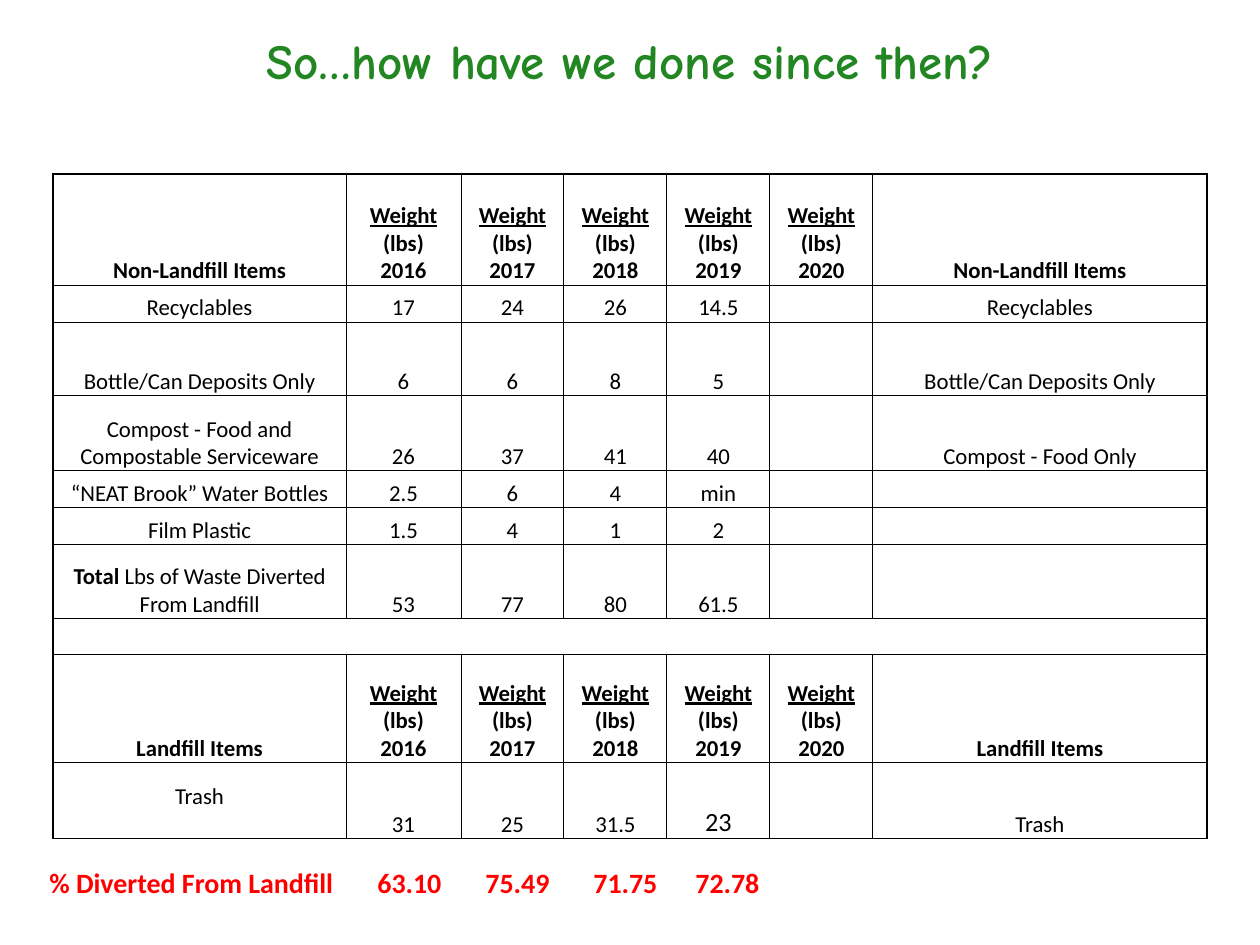
from lxml import etree
from pptx import Presentation
from pptx.dml.color import RGBColor
from pptx.enum.text import MSO_ANCHOR, PP_ALIGN
from pptx.oxml.ns import qn
from pptx.util import Pt

PX = 7257.6  # EMU per pixel at 126 px to the inch
CENTER = PP_ALIGN.CENTER
LEFT = PP_ALIGN.LEFT
BOTTOM = MSO_ANCHOR.BOTTOM


def write(para, text, size=13, font="Calibri", color="000000", bold=False,
          underline=False, align=CENTER):
    """Add text to a paragraph, with a line break at each newline."""
    para.alignment = align
    for number, line in enumerate(text.split("\n")):
        if number:
            para.add_line_break()
            line_break = para._p.findall(qn("a:br"))[-1]
            etree.SubElement(line_break, qn("a:rPr"), sz=str(size * 100))
        if line:
            span = para.add_run()
            span.text = line
            span.font.size = Pt(size)
            span.font.name = font
            span.font.bold = bold
            span.font.underline = underline
            span.font.color.rgb = RGBColor.from_string(color)


def set_border(cell, side, points):
    """Draw one side (L, R, T or B) of a cell; zero points means no line."""
    line = etree.SubElement(cell._tc.get_or_add_tcPr(), qn("a:ln" + side),
                            w=str(Pt(points)))
    if points:
        fill = etree.SubElement(line, qn("a:solidFill"))
        etree.SubElement(fill, qn("a:srgbClr"), val="000000")
    else:
        etree.SubElement(line, qn("a:noFill"))


deck = Presentation()
deck.slide_width = round(1260 * PX)
deck.slide_height = round(945 * PX)
page = deck.slides.add_slide(deck.slide_layouts[6])

# Title
title = page.shapes.add_textbox(*[round(n * PX) for n in (106, 24, 1048, 111)])
title.text_frame.word_wrap = True
write(title.text_frame.paragraphs[0], "So…how have we done since then?",
      size=28, font="Comic Neue", color="228622", bold=True)

# Weights table
years = ["2016", "2017", "2018", "2019", "2020"]
rows = [
    (111, ["Non-Landfill Items", *years, "Non-Landfill Items"]),
    (37, ["Recyclables", "17", "24", "26", "14.5", "", "Recyclables"]),
    (74, ["Bottle/Can Deposits Only", "6", "6", "8", "5", "",
          "Bottle/Can Deposits Only"]),
    (75, ["Compost - Food and\nCompostable Serviceware", "26", "37", "41", "40", "",
          "Compost - Food Only"]),
    (37, ["“NEAT Brook” Water Bottles", "2.5", "6", "4", "min", "", ""]),
    (37, ["Film Plastic", "1.5", "4", "1", "2", "", ""]),
    (74, ["Total Lbs of Waste Diverted From Landfill", "53", "77", "80", "61.5", "", ""]),
    (36, [""] * 7),
    (108, ["Landfill Items", *years, "Landfill Items"]),
    (76, ["Trash", "31", "25", "31.5", "23", "", "Trash"]),
]
widths = [293, 115, 103, 103, 103, 103, 334]
header_rows = (0, 8)
spacer_row = 7
trash_row = 9
last_col = len(widths) - 1

frame = page.shapes.add_table(
    len(rows), len(widths), round(53 * PX), round(174 * PX),
    round(sum(widths) * PX), round(sum(height for height, _ in rows) * PX))
table = frame.table
table.first_row = False
table.horz_banding = False
for column, width in zip(table.columns, widths):
    column.width = round(width * PX)

for r, (height, texts) in enumerate(rows):
    table.rows[r].height = round(height * PX)
    for c, text in enumerate(texts):
        cell = table.cell(r, c)
        inner = 0 if r == spacer_row else 0.5
        set_border(cell, "L", 1 if c == 0 else inner)
        set_border(cell, "R", 1 if c == last_col else inner)
        set_border(cell, "T", 1 if r == 0 else 0.5)
        set_border(cell, "B", 0.5)
        cell.fill.background()
        cell.vertical_anchor = BOTTOM
        cell.margin_left = cell.margin_right = cell.margin_top = round(PX)
        cell.margin_bottom = round(28 * PX) if (r, c) == (trash_row, 0) else 0

        para = cell.text_frame.paragraphs[0]
        if r in header_rows and text in years:
            write(para, "Weight ", bold=True, underline=True)
            write(para, "(lbs)\n" + text, bold=True)
        elif text.startswith("Total"):
            write(para, "Total", bold=True)
            write(para, text.removeprefix("Total"))
        elif text:
            write(para, text, size=15 if text == "23" else 13, bold=r in header_rows)
        else:
            para._p.get_or_add_endParaRPr().set("sz", "1300")

# Diverted share, with one tab stop per year
share = page.shapes.add_textbox(*[round(n * PX) for n in (37, 859, 766, 47)])
share.text_frame.word_wrap = True
para = share.text_frame.paragraphs[0]
tabs = etree.SubElement(para._p.get_or_add_pPr(), qn("a:tabLst"))
for stop in (328, 436, 544, 646):
    etree.SubElement(tabs, qn("a:tab"), pos=str(round(stop * PX)), algn="l")
write(para, "% Diverted From Landfill\t63.10\t75.49\t71.75\t72.78",
      size=16, color="FF0000", bold=True, align=LEFT)

deck.save("out.pptx")
